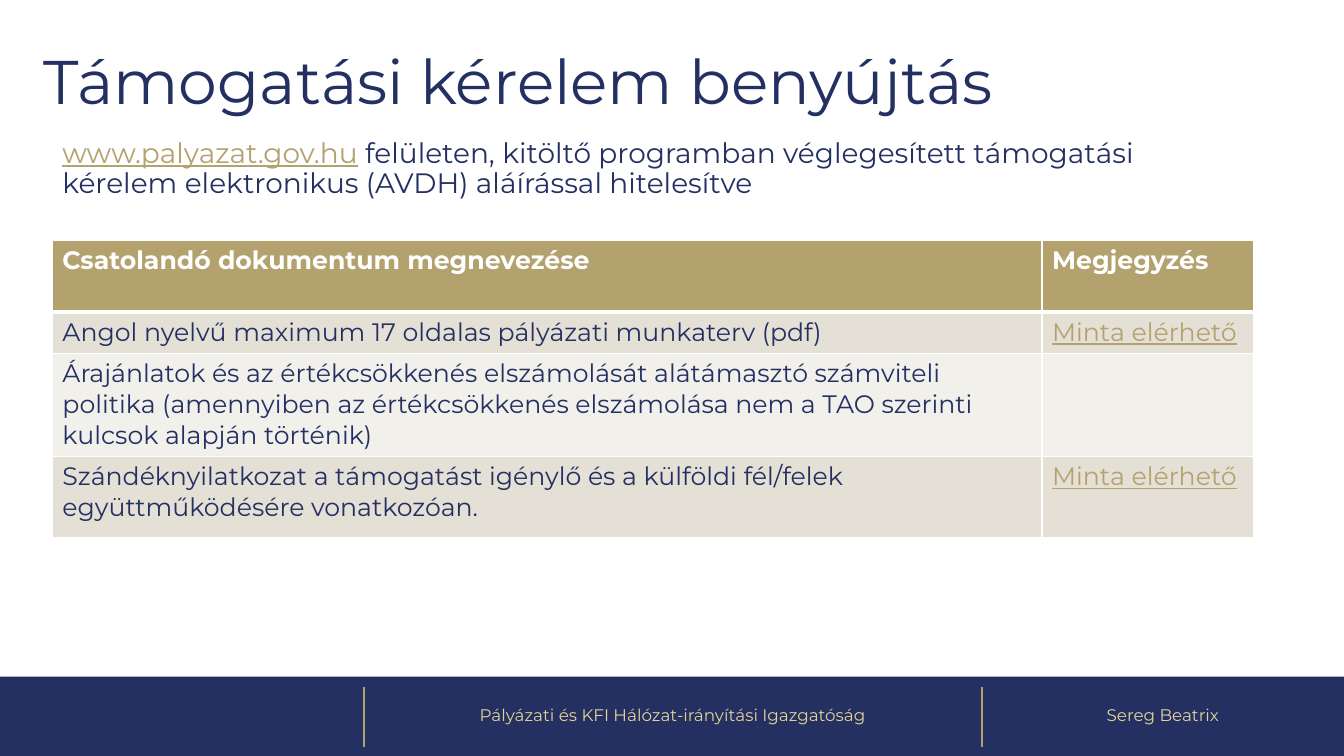
import dataclasses

import lxml.etree
import pptx
import pptx.dml.color
import pptx.enum.shapes
import pptx.enum.text
import pptx.oxml.ns
import pptx.util

Cm = pptx.util.Cm
Pt = pptx.util.Pt
ALIGN = pptx.enum.text.PP_ALIGN
ANCHOR = pptx.enum.text.MSO_ANCHOR


@dataclasses.dataclass(frozen=True)
class Theme:
    font: str = "Montserrat"
    navy: str = "242F62"
    gold: str = "B3A16E"
    pale_gold: str = "E3D496"
    white: str = "FFFFFF"
    bands: tuple = ("E5E0D5", "F2F0EB")
    title_size: int = 44
    intro_size: int = 20
    table_size: int = 18
    footer_size: int = 12


@dataclasses.dataclass(frozen=True)
class Box:
    left: float
    top: float
    width: float
    height: float

    def lengths(self):
        return Cm(self.left), Cm(self.top), Cm(self.width), Cm(self.height)


THEME = Theme()
HEADINGS = ("Csatolandó dokumentum megnevezése", "Megjegyzés")
SAMPLE = "Minta elérhető"
DOCUMENTS = (
    ("Angol nyelvű maximum 17 oldalas pályázati munkaterv (pdf)", SAMPLE),
    ("Árajánlatok és az értékcsökkenés elszámolását alátámasztó számviteli politika "
     "(amennyiben az értékcsökkenés elszámolása nem a TAO szerinti kulcsok alapján történik)", ""),
    ("Szándéknyilatkozat a támogatást igénylő és a külföldi fél/felek "
     "együttműködésére vonatkozóan.", SAMPLE),
)


def rgb(color):
    return pptx.dml.color.RGBColor.from_string(color)


def style(font, size, color, bold=False, underline=False):
    font.name = THEME.font
    font.size = Pt(size)
    font.color.rgb = rgb(color)
    font.bold = bold
    font.underline = underline


def add_text(page, box, parts, size, anchor=ANCHOR.TOP, align=ALIGN.LEFT):
    frame = page.shapes.add_textbox(*box.lengths()).text_frame
    frame.word_wrap = True
    frame.vertical_anchor = anchor
    para = frame.paragraphs[0]
    para.alignment = align
    para.line_spacing = 0.9
    for text, color, underline in parts:
        span = para.add_run()
        span.text = text
        style(span.font, size, color, underline=underline)


def add_heading(page, box):
    parts = [("Támogatási kérelem benyújtás", THEME.navy, False)]
    add_text(page, box, parts, THEME.title_size, ANCHOR.MIDDLE)


def add_intro(page, box):
    parts = [
        ("www.palyazat.gov.hu", THEME.gold, True),
        (" felületen, kitöltő programban véglegesített támogatási kérelem "
         "elektronikus (AVDH) aláírással hitelesítve", THEME.navy, False),
    ]
    add_text(page, box, parts, THEME.intro_size)


def set_borders(cell, row):
    properties = cell._tc.get_or_add_tcPr()
    widths = {"L": 1, "R": 1, "T": 3 if row == 1 else 1, "B": 3 if row == 0 else 1}
    for side, width in widths.items():
        line = lxml.etree.SubElement(properties, pptx.oxml.ns.qn(f"a:ln{side}"), w=str(Pt(width)))
        fill = lxml.etree.SubElement(line, pptx.oxml.ns.qn("a:solidFill"))
        lxml.etree.SubElement(fill, pptx.oxml.ns.qn("a:srgbClr"), val=THEME.white)


def add_documents(page, box):
    widths = (24.94, box.width - 24.94)
    heights = (1.8, 1.04, 2.6, 2.05)
    rows = (HEADINGS,) + DOCUMENTS
    table = page.shapes.add_table(len(rows), len(widths), *box.lengths()).table
    for column, width in zip(table.columns, widths):
        column.width = Cm(width)
    for row, (texts, height) in enumerate(zip(rows, heights)):
        table.rows[row].height = Cm(height)
        header = row == 0
        for column, text in enumerate(texts):
            cell = table.cell(row, column)
            set_borders(cell, row)
            cell.fill.solid()
            cell.fill.fore_color.rgb = rgb(THEME.gold if header else THEME.bands[(row - 1) % 2])
            cell.text_frame.text = text
            sample = text == SAMPLE
            color = THEME.white if header else THEME.gold if sample else THEME.navy
            para = cell.text_frame.paragraphs[0]
            style(para.font, THEME.table_size, color, header, sample)
            for span in para.runs:
                style(span.font, THEME.table_size, color, header, sample)


def add_divider(page, left, top, bottom):
    divider = page.shapes.add_connector(
        pptx.enum.shapes.MSO_CONNECTOR.STRAIGHT, Cm(left), Cm(top), Cm(left), Cm(bottom))
    divider.line.color.rgb = rgb(THEME.gold)
    divider.line.width = Pt(1.5)
    lxml.etree.SubElement(divider._element.spPr, pptx.oxml.ns.qn("a:effectLst"))


def add_footer(page, box):
    bar = page.shapes.add_shape(pptx.enum.shapes.MSO_SHAPE.RECTANGLE, *box.lengths())
    bar.shadow.inherit = False
    bar.fill.solid()
    bar.fill.fore_color.rgb = rgb(THEME.navy)
    bar.line.fill.background()
    stops = (box.left + 9.17, box.left + 24.74, box.left + box.width)
    for left in stops[:2]:
        add_divider(page, left, box.top + 0.27, box.top + box.height - 0.23)
    labels = ("Pályázati és KFI Hálózat-irányítási Igazgatóság", "Sereg Beatrix")
    for left, right, label in zip(stops, stops[1:], labels):
        area = Box(left, box.top, right - left, box.height)
        add_text(page, area, [(label, THEME.pale_gold, False)],
                 THEME.footer_size, ANCHOR.MIDDLE, ALIGN.CENTER)


def main():
    deck = pptx.Presentation()
    deck.slide_width = Cm(33.87)
    deck.slide_height = Cm(19.05)
    page = deck.slides.add_slide(deck.slide_layouts[6])
    add_footer(page, Box(0, 17.05, 33.87, 2))
    add_heading(page, Box(0.85, 0.28, 29.21, 3.69))
    add_intro(page, Box(1.32, 3.38, 29.21, 2))
    add_documents(page, Box(1.32, 6.06, 30.27, 7.49))
    deck.save("out.pptx")


if __name__ == "__main__":
    main()
